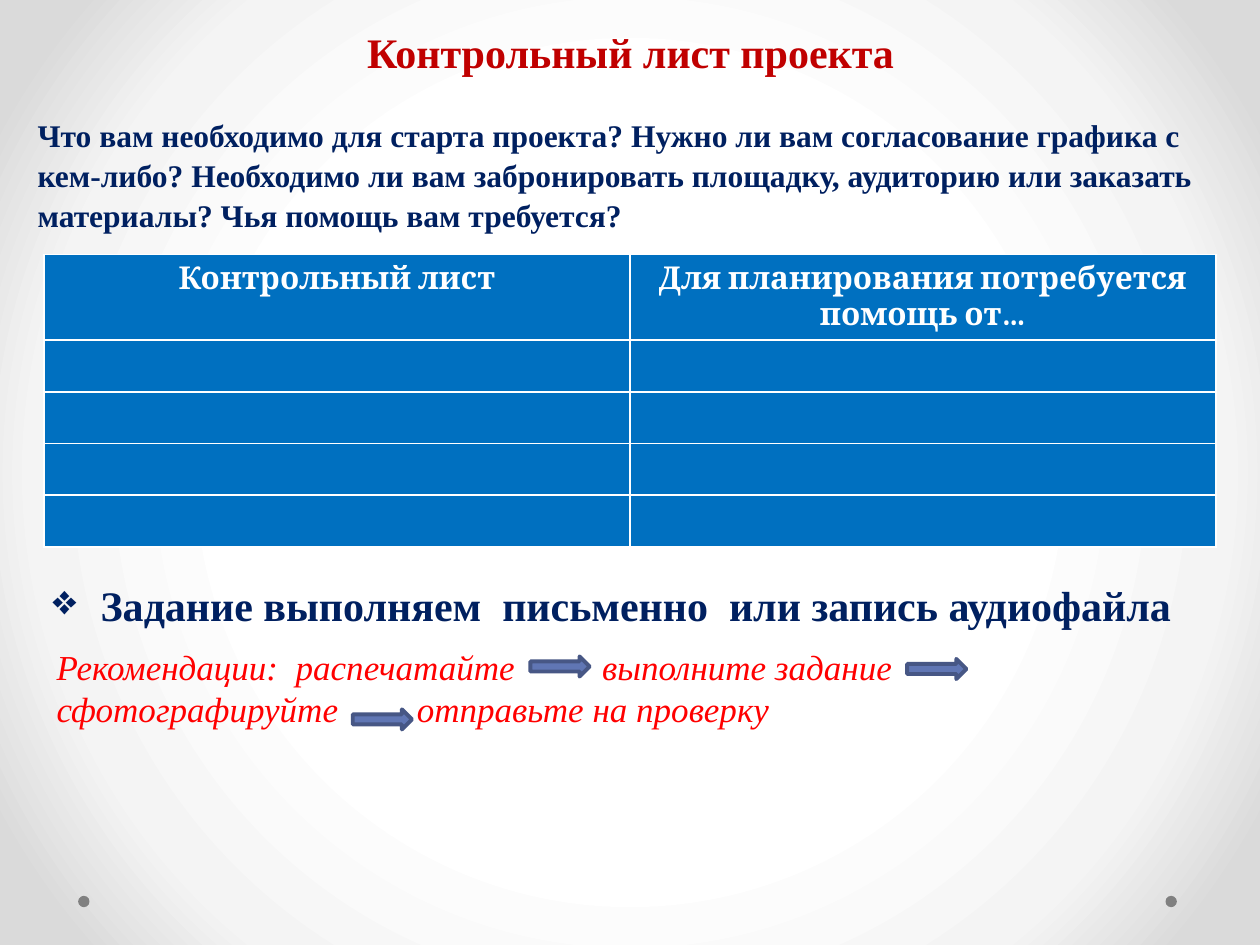
from dataclasses import dataclass

from lxml import etree
from pptx import Presentation
from pptx.dml.color import RGBColor
from pptx.enum import shapes, text
from pptx.oxml import parse_xml
from pptx.oxml.ns import nsdecls, qn
from pptx.util import Inches, Pt

WHITE = RGBColor(0xFF, 0xFF, 0xFF)
GREY = RGBColor(0x80, 0x80, 0x80)
DARK_RED = RGBColor(0xC0, 0x00, 0x00)
RED = RGBColor(0xFF, 0x00, 0x00)
NAVY = RGBColor(0x00, 0x20, 0x60)
TABLE_BLUE = RGBColor(0x00, 0x70, 0xC0)
ARROW_FILL = RGBColor(0x60, 0x76, 0xB4)
ARROW_LINE = RGBColor(0x47, 0x57, 0x85)
BACKGROUND_STOPS = [(50, "FFFFFF"), (76, "F4F4F4"), (92, "DADADA")]

HEADERS = ["Контрольный лист", "Для планирования потребуется помощь от…"]
EMPTY_ROWS = 4
HEADER_HEIGHT, ROW_HEIGHT = 0.68, 0.41


@dataclass
class Box:
    left: float
    top: float
    width: float
    height: float

    def lengths(self):
        return [Inches(v) for v in (self.left, self.top, self.width, self.height)]


@dataclass
class Style:
    size: float
    color: RGBColor
    name: str = "Times New Roman"
    bold: bool = False
    italic: bool = False


DOTS = [Box(left, 7.11, 0.09, 0.09) for left in (0.62, 9.25)]
ARROWS = [Box(left, top, 0.47, 0.16)
          for left, top in ((4.21, 5.21), (2.8, 5.63), (7.2, 5.23))]


def format_paragraph(p, style: Style) -> None:
    for r in p.runs:
        f = r.font
        f.size, f.name = Pt(style.size), style.name
        f.bold, f.italic = style.bold, style.italic
        f.color.rgb = style.color


def fill_frame(sp, content: str, style: Style):
    """Set one top-anchored, wrapping paragraph and return it."""
    tf = sp.text_frame
    tf.word_wrap = True
    tf.auto_size = text.MSO_AUTO_SIZE.NONE
    tf.vertical_anchor = text.MSO_ANCHOR.TOP
    p = tf.paragraphs[0]
    p.text = content
    format_paragraph(p, style)
    return p


def add_text(slide, box: Box, content: str, style: Style):
    return fill_frame(slide.shapes.add_textbox(*box.lengths()), content, style)


def add_figure(slide, kind, box: Box, fill: RGBColor, line: RGBColor | None = None) -> None:
    sp = slide.shapes.add_shape(kind, *box.lengths())
    sp.shadow.inherit = False
    sp.fill.solid()
    sp.fill.fore_color.rgb = fill
    if line is None:
        sp.line.fill.background()
    else:
        sp.line.color.rgb = line
        sp.line.width = Pt(2.25)


def set_tabs(p, *stops: float) -> None:
    tabs = etree.SubElement(p._p.get_or_add_pPr(), qn("a:tabLst"))
    for stop in stops:
        etree.SubElement(tabs, qn("a:tab"), pos=str(Inches(stop)), algn="l")


def set_bullet(p, char: str, indent: float) -> None:
    pPr = p._p.get_or_add_pPr()
    pPr.set("marL", str(Inches(indent)))
    pPr.set("indent", str(-Inches(indent)))
    etree.SubElement(pPr, qn("a:buChar"), char=char)


def set_background(slide) -> None:
    """Apply a radial gradient centred on the slide."""
    slide.background.fill.gradient()
    old = slide.element.find(".//" + qn("a:gradFill"))
    stops = "".join(f'<a:gs pos="{pos * 1000}"><a:srgbClr val="{color}"/></a:gs>'
                    for pos, color in BACKGROUND_STOPS)
    new = parse_xml(
        f'<a:gradFill {nsdecls("a")} rotWithShape="1"><a:gsLst>{stops}</a:gsLst>'
        '<a:path path="circle"><a:fillToRect l="50000" t="50000" r="50000" b="50000"/>'
        '</a:path></a:gradFill>')
    old.getparent().replace(old, new)


def style_cell(cell) -> None:
    tcPr = cell._tc.get_or_add_tcPr()
    for side in ("lnL", "lnR", "lnT", "lnB"):
        tcPr.append(parse_xml(
            f'<a:{side} {nsdecls("a")} w="{Pt(1)}"><a:solidFill>'
            f'<a:srgbClr val="{WHITE}"/></a:solidFill></a:{side}>'))
    cell.fill.solid()
    cell.fill.fore_color.rgb = TABLE_BLUE


def add_checklist(slide) -> None:
    box = Box(0.35, 2.02, 9.3, HEADER_HEIGHT + EMPTY_ROWS * ROW_HEIGHT)
    table = slide.shapes.add_table(EMPTY_ROWS + 1, len(HEADERS), *box.lengths()).table
    for i, row in enumerate(table.rows):
        row.height = Inches(ROW_HEIGHT if i else HEADER_HEIGHT)
    for cell in table.iter_cells():
        style_cell(cell)
    for cell, header in zip(table.rows[0].cells, HEADERS):
        cell.text = header
        p = cell.text_frame.paragraphs[0]
        p.alignment = text.PP_ALIGN.CENTER
        format_paragraph(p, Style(18, WHITE, "Cambria", bold=True))


def main() -> None:
    prs = Presentation()
    prs.slide_width, prs.slide_height = Inches(10), Inches(7.5)
    slide = prs.slides.add_slide(prs.slide_layouts[5])
    set_background(slide)
    for dot in DOTS:
        add_figure(slide, shapes.MSO_SHAPE.OVAL, dot, GREY)

    title = slide.shapes.title
    title.left, title.top, title.width, title.height = Box(0.2, 0.13, 9.61, 0.6).lengths()
    p = fill_frame(title, "Контрольный лист проекта", Style(24, DARK_RED, bold=True))
    p.alignment = text.PP_ALIGN.CENTER
    p.line_spacing = 1.07

    p = add_text(
        slide, Box(0.2, 0.86, 9.61, 1.01),
        "Что вам необходимо для старта проекта? Нужно ли вам согласование графика с "
        "кем-либо? Необходимо ли вам забронировать площадку, аудиторию или заказать "
        "материалы? Чья помощь вам требуется?", Style(18, NAVY, bold=True))
    p.line_spacing = 1.05

    add_checklist(slide)

    p = add_text(slide, Box(0.32, 4.49, 9.21, 0.57),
                 "Задание выполняем  письменно  или запись аудиофайла",
                 Style(24, NAVY, bold=True))
    p.line_spacing = 1.15
    p.space_before = Pt(5)
    set_bullet(p, "❖", 0.38)

    p = add_text(slide, Box(0.35, 5.07, 9.29, 0.77),
                 "Рекомендации:  распечатайте\tвыполните задание\v"
                 "сфотографируйте\tотправьте на проверку",
                 Style(20, RED, italic=True))
    p.space_before = Pt(4)
    set_tabs(p, 2.86, 4.33)

    for arrow in ARROWS:
        add_figure(slide, shapes.MSO_SHAPE.RIGHT_ARROW, arrow, ARROW_FILL, ARROW_LINE)
    prs.save("out.pptx")


if __name__ == "__main__":
    main()
